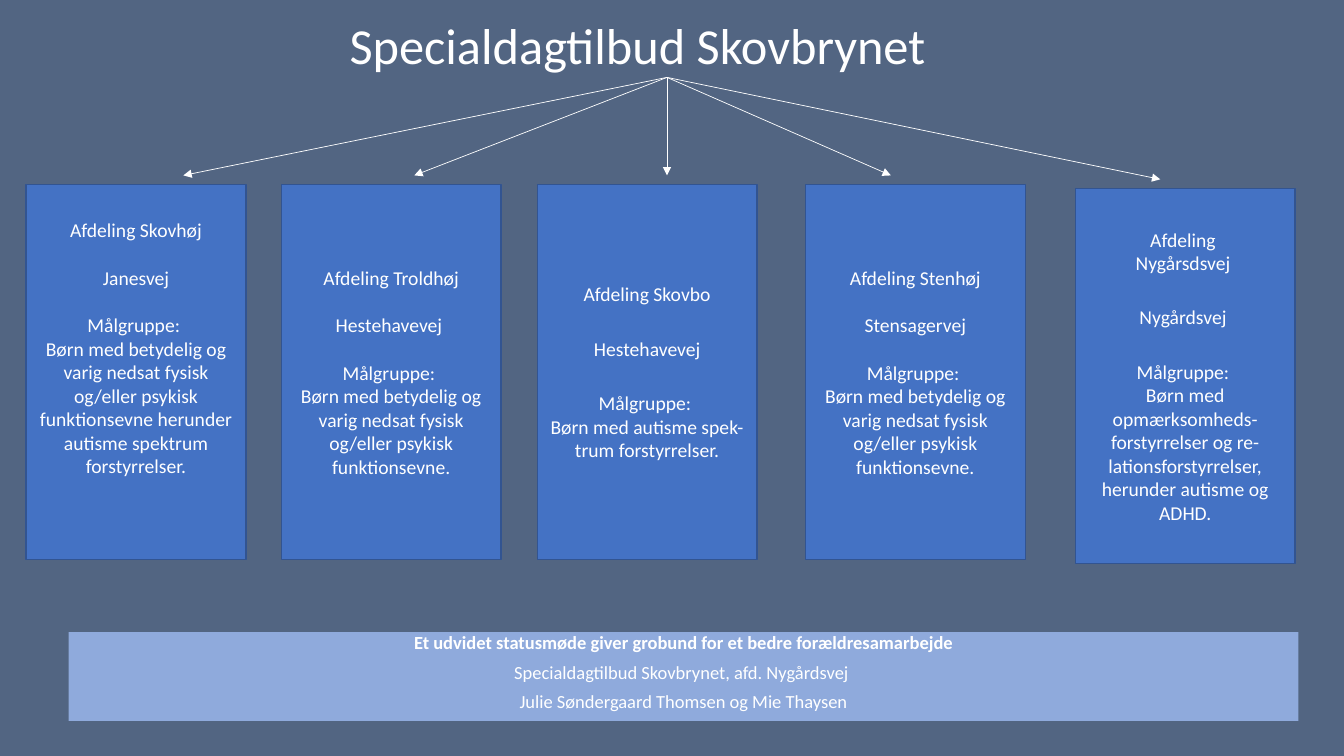
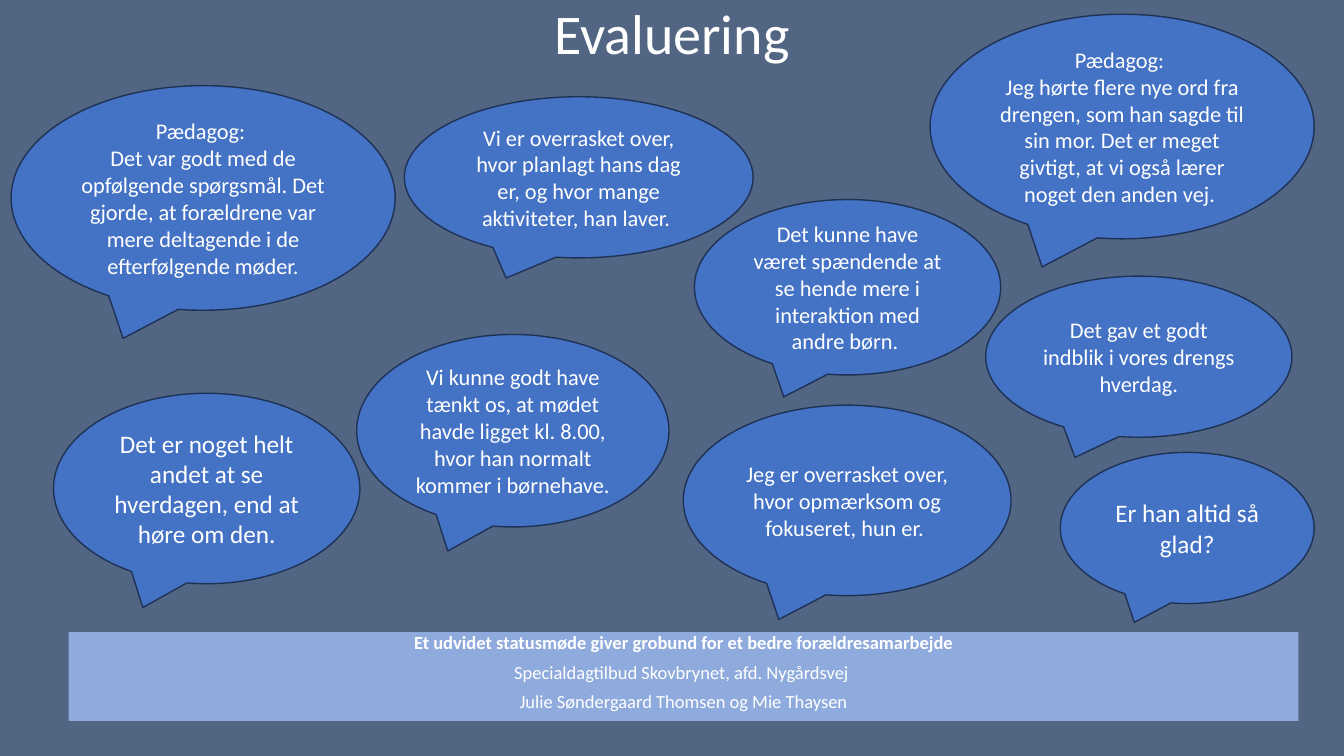
from dataclasses import dataclass

from lxml.etree import SubElement
from pptx import Presentation
from pptx.dml.color import RGBColor
from pptx.enum.shapes import MSO_CONNECTOR as Connector, MSO_SHAPE as Shape
from pptx.enum.text import MSO_ANCHOR as Anchor, PP_ALIGN as Align
from pptx.oxml.ns import qn
from pptx.util import Cm, Pt


@dataclass(frozen=True)
class Theme:
    font: str = "Calibri"
    background: RGBColor = RGBColor.from_string("526582")
    text: RGBColor = RGBColor.from_string("FFFFFF")
    fill: RGBColor = RGBColor.from_string("4472C4")
    card_line: RGBColor = RGBColor.from_string("325491")
    callout_line: RGBColor = RGBColor.from_string("1E3256")
    footer_fill: RGBColor = RGBColor.from_string("8FAADC")
    card_size: float = 14
    callout_size: float = 16
    large_callout_size: float = 18
    footer_size: float = 13.2


THEME = Theme()

FOOTER = [
    "Et udvidet statusmøde giver grobund for et bedre forældresamarbejde",
    "Specialdagtilbud Skovbrynet, afd. Nygårdsvej ",
    "Julie Søndergaard Thomsen og Mie Thaysen",
]

HUB = (16.81, 1.95)
CARD_SIZE = (5.54, 9.45)
CARD_TOP = 4.65
ARROW_GAP = 0.23
NARROW_GAP, WIDE_GAP = 17, 22
REDUCED_ABILITY = "Børn med betydelig og varig nedsat fysisk og/eller psykisk funktionsevne."

# left, top, arrow end, gap, bottom margin, name, road, target group
DEPARTMENTS = [
    (0.66, CARD_TOP, 4.62, NARROW_GAP, 1.33, ["Afdeling Skovhøj"], "Janesvej",
     ["Børn med betydelig og varig nedsat fysisk og/eller psykisk "
      "funktionsevne herunder autisme spektrum forstyrrelser."]),
    (7.09, CARD_TOP, 10.44, NARROW_GAP, 0.13, ["Afdeling Troldhøj"],
     "Hestehavevej ", [REDUCED_ABILITY]),
    (13.54, CARD_TOP, 16.81, WIDE_GAP, 0.13, ["Afdeling Skovbo"],
     "Hestehavevej", ["Børn med autisme spek-trum forstyrrelser."]),
    (20.3, CARD_TOP, 22.45, NARROW_GAP, 0.13, ["Afdeling Stenhøj"],
     "Stensagervej", [REDUCED_ABILITY]),
    (27.1, 4.75, 29.24, WIDE_GAP, 0.13, ["Afdeling ", "Nygårsdsvej "],
     "Nygårdsvej ",
     ["Børn med opmærksomheds-",
      "forstyrrelser og re-lationsforstyrrelser, herunder autisme og ADHD."]),
]

CALLOUTS = [
    (26.72, 11.4, 6.4, 3.81, THEME.large_callout_size, ["Er han altid så glad?"]),
    (1.35, 9.91, 7.72, 4.8, THEME.large_callout_size,
     ["Det er noget helt andet at se hverdagen, end at høre om den."]),
    (0.28, 2.16, 9.68, 5.66, THEME.callout_size,
     ["Pædagog: ",
      "Det var godt med de opfølgende spørgsmål. Det gjorde, at forældrene "
      "var mere deltagende i de efterfølgende møder."]),
    (10.19, 2.44, 8.79, 4.06, THEME.callout_size,
     ["Vi er overrasket over, hvor planlagt hans dag er, og hvor mange "
      "aktiviteter, han laver. "]),
    (17.22, 10.21, 8.26, 4.8, THEME.callout_size,
     ["Jeg er overrasket over, hvor opmærksom og fokuseret, hun er. "]),
    (8.99, 8.43, 7.87, 4.85, THEME.callout_size,
     ["Vi kunne godt have tænkt os, at mødet havde ligget kl. 8.00, hvor han "
      "normalt kommer i børnehave."]),
    (17.5, 5.03, 7.72, 4.42, THEME.callout_size,
     ["Det kunne have været spændende at se hende mere i interaktion med "
      "andre børn. "]),
    (24.84, 6.96, 7.72, 4.06, THEME.callout_size,
     ["Det gav et godt indblik i vores drengs hverdag."]),
    (23.44, 0.36, 9.68, 5.66, THEME.callout_size,
     ["Pædagog: ",
      "Jeg hørte flere nye ord fra drengen, som han sagde til sin mor. Det er "
      "meget givtigt, at vi også lærer noget den anden vej. "]),
]


def write_paragraphs(text_frame, texts, size, align=Align.CENTER):
    text_frame.word_wrap = True
    text_frame.text = "\n".join(texts)
    for paragraph in text_frame.paragraphs:
        paragraph.alignment = align
        paragraph.font.name = THEME.font
        paragraph.font.size = Pt(size)
        paragraph.font.color.rgb = THEME.text
    return text_frame.paragraphs


def add_title(slide, text, left, top, width, height, size, align):
    box = slide.shapes.add_textbox(Cm(left), Cm(top), Cm(width), Cm(height))
    write_paragraphs(box.text_frame, [text], size, align)


def add_panel(slide, kind, left, top, width, height, fill, line=None):
    shape = slide.shapes.add_shape(kind, Cm(left), Cm(top), Cm(width), Cm(height))
    shape.shadow.inherit = False
    shape.fill.solid()
    shape.fill.fore_color.rgb = fill
    if line is None:
        shape.line.fill.background()
    else:
        shape.line.color.rgb = line
        shape.line.width = Pt(1)
    shape.text_frame.vertical_anchor = Anchor.MIDDLE
    return shape


def add_arrow(slide, start, end):
    arrow = slide.shapes.add_connector(
        Connector.STRAIGHT, *(Cm(value) for value in (*start, *end)))
    arrow.line.color.rgb = THEME.text
    arrow.line.width = Pt(0.5)
    SubElement(arrow.line._get_or_add_ln(), qn("a:tailEnd"), type="triangle")
    SubElement(arrow._element.spPr, qn("a:effectLst"))


def add_card(slide, left, top, gap, bottom_margin, name, road, group):
    card = add_panel(slide, Shape.RECTANGLE, left, top, *CARD_SIZE,
                     THEME.fill, THEME.card_line)
    card.text_frame.margin_bottom = Cm(bottom_margin)
    texts = [*name, road, "Målgruppe: ", *group]
    paragraphs = write_paragraphs(card.text_frame, texts, THEME.card_size)
    for index in (len(name), len(name) + 1):
        paragraphs[index].space_before = Pt(gap)


def add_callout(slide, left, top, width, height, size, texts):
    callout = add_panel(slide, Shape.OVAL_CALLOUT, left, top, width, height,
                        THEME.fill, THEME.callout_line)
    write_paragraphs(callout.text_frame, texts, size)


def add_footer(slide):
    footer = add_panel(slide, Shape.RECTANGLE, 1.73, 15.93, 30.99, 2.24,
                       THEME.footer_fill)
    footer.text_frame.vertical_anchor = Anchor.TOP
    paragraphs = write_paragraphs(footer.text_frame, FOOTER, THEME.footer_size)
    for paragraph in paragraphs:
        paragraph.line_spacing = 0.7
        paragraph.space_before = Pt(10)
    paragraphs[0].font.bold = True


def add_slide(presentation):
    slide = presentation.slides.add_slide(presentation.slide_layouts[6])
    add_footer(slide)
    return slide


def build_departments(presentation):
    slide = add_slide(presentation)
    add_title(slide, "Specialdagtilbud Skovbrynet", 8.56, 0.23, 19.63, 1.8, 36,
              Align.LEFT)
    for left, top, arrow_end, *content in DEPARTMENTS:
        add_card(slide, left, top, *content)
        add_arrow(slide, HUB, (arrow_end, top - ARROW_GAP))


def build_evaluation(presentation):
    slide = add_slide(presentation)
    add_title(slide, "Evaluering", 0, -0.15, 33.87, 1.96, 40, Align.CENTER)
    for callout in CALLOUTS:
        add_callout(slide, *callout)


def main():
    presentation = Presentation()
    presentation.slide_width = Cm(33.87)
    presentation.slide_height = Cm(19.05)
    background = presentation.slide_master.background.fill
    background.solid()
    background.fore_color.rgb = THEME.background
    build_departments(presentation)
    build_evaluation(presentation)
    presentation.save("out.pptx")


if __name__ == "__main__":
    main()
